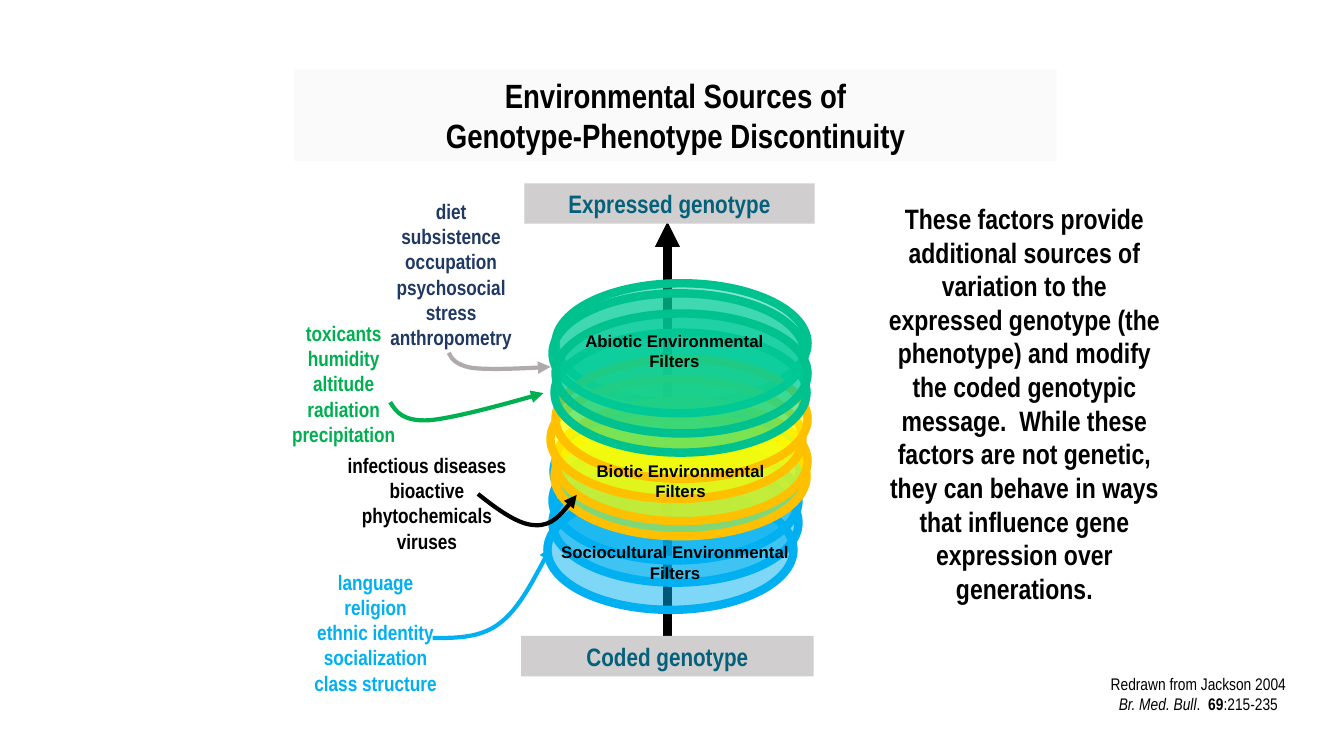
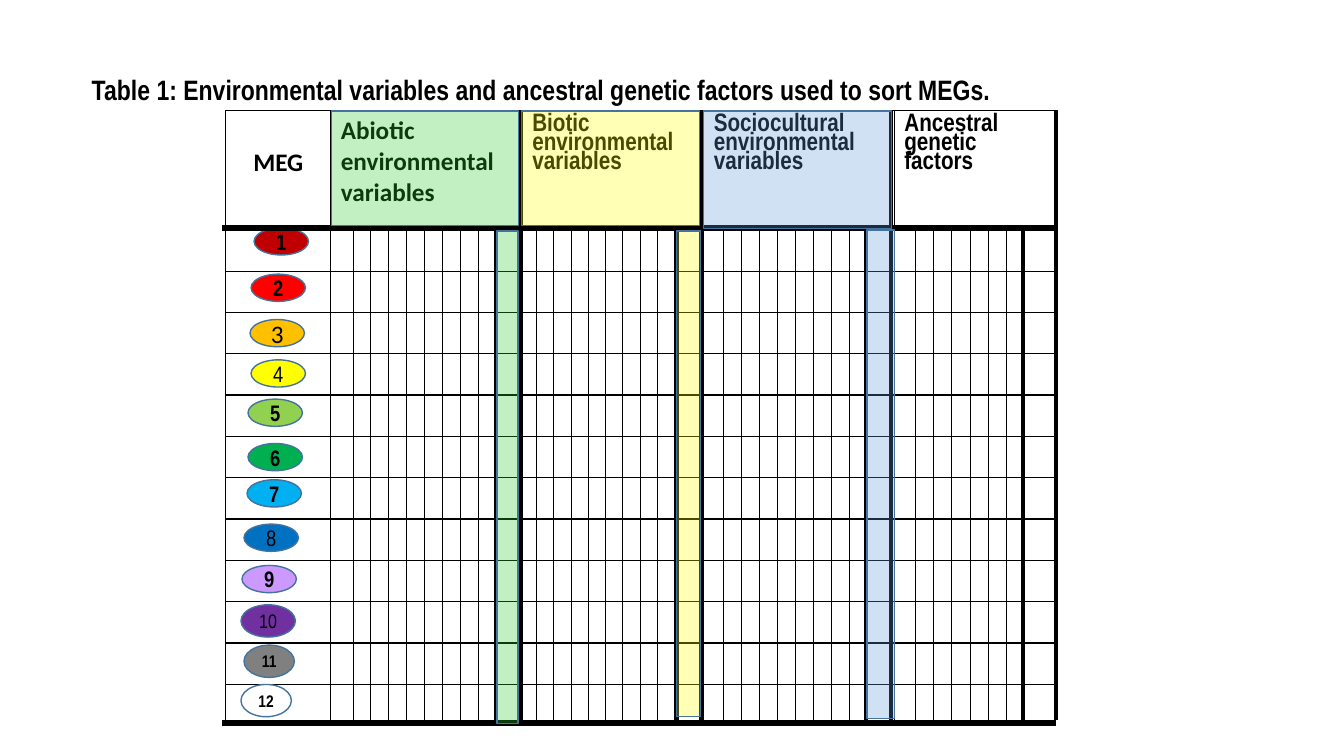
"""Build two slides on environmental filters and the variables that sort MEGs."""
from lxml.etree import SubElement
from pptx import Presentation
from pptx.dml.color import RGBColor
from pptx.enum.shapes import MSO_CONNECTOR, MSO_SHAPE
from pptx.enum.text import MSO_ANCHOR, MSO_AUTO_SIZE, PP_ALIGN
from pptx.oxml import parse_xml
from pptx.oxml.ns import nsdecls, qn
from pptx.util import Emu, Pt

EMU_PER_PX = 9144
NARROW, SANS, CALIBRI = "Arial Narrow", "Arial", "Calibri"
BLACK = RGBColor(0x00, 0x00, 0x00)
WHITE = RGBColor(0xFF, 0xFF, 0xFF)
TITLE_GRAY = RGBColor(0xFA, 0xFA, 0xFA)
LABEL_GRAY = RGBColor(0xD0, 0xCE, 0xCE)
ARROW_GRAY = RGBColor(0xAF, 0xAB, 0xAB)
DARK_GRAY = RGBColor(0x80, 0x80, 0x80)
TEAL = RGBColor(0x04, 0x61, 0x7B)
NAVY = RGBColor(0x20, 0x38, 0x64)
EDGE_BLUE = RGBColor(0x43, 0x73, 0x9E)
SKY = RGBColor(0x00, 0xB0, 0xF0)
BLUE = RGBColor(0x00, 0x70, 0xC0)
SOFT_BLUE = RGBColor(0x5B, 0x9B, 0xD5)
GREEN = RGBColor(0x00, 0xB0, 0x50)
LEAF = RGBColor(0x33, 0xCC, 0x33)
LIME = RGBColor(0x92, 0xD0, 0x50)
MINT = RGBColor(0x00, 0xCC, 0x99)
MINT_EDGE = RGBColor(0x00, 0xC2, 0x8F)
YELLOW = RGBColor(0xFF, 0xFF, 0x00)
AMBER = RGBColor(0xFF, 0xC0, 0x00)
RED = RGBColor(0xFF, 0x00, 0x00)
DARK_RED = RGBColor(0xC0, 0x00, 0x00)
LILAC = RGBColor(0xCC, 0x99, 0xFF)
PURPLE = RGBColor(0x70, 0x30, 0xA0)


def px(length):
    return Emu(round(length * EMU_PER_PX))


def write_text(frame, paragraphs, size=15, font=NARROW, color=BLACK, bold=True,
               align=PP_ALIGN.CENTER, anchor=MSO_ANCHOR.TOP, spacing=1.0, wrap=True):
    frame.word_wrap = wrap
    frame.auto_size = MSO_AUTO_SIZE.NONE
    frame.vertical_anchor = anchor
    for index, content in enumerate(paragraphs):
        paragraph = frame.add_paragraph() if index else frame.paragraphs[0]
        paragraph.alignment = align
        paragraph.line_spacing = spacing
        parts = [(content, {})] if isinstance(content, str) else content
        for words, changes in parts:
            run = paragraph.add_run()
            run.text = words
            run.font.name = font
            run.font.size = Pt(size)
            run.font.color.rgb = color
            run.font.bold = changes.get("bold", bold)
            run.font.italic = changes.get("italic", False)


class Deck:
    def __init__(self):
        self.presentation = Presentation()
        self.presentation.slide_width = px(1333)
        self.presentation.slide_height = px(750)
        self.slide = None

    def new_slide(self, title, box, fill=None, **text_format):
        layout = self.presentation.slide_layouts[5]
        self.slide = self.presentation.slides.add_slide(layout)
        heading = self.slide.shapes.title
        heading.left, heading.top, heading.width, heading.height = map(px, box)
        if fill is not None:
            heading.fill.solid()
            heading.fill.fore_color.rgb = fill
        write_text(heading.text_frame, title, **text_format)

    def text(self, box, paragraphs, **text_format):
        label = self.slide.shapes.add_textbox(*map(px, box))
        write_text(label.text_frame, paragraphs, **text_format)

    def shape(self, kind, box, fill, edge=None, edge_width=1, opacity=100,
              paragraphs=(), **text_format):
        figure = self.slide.shapes.add_shape(kind, *map(px, box))
        figure.shadow.inherit = False
        figure.fill.solid()
        figure.fill.fore_color.rgb = fill
        if opacity < 100:
            tint = figure.element.xpath("./p:spPr/a:solidFill/a:srgbClr")[0]
            SubElement(tint, qn("a:alpha"), val=str(opacity * 1000))
        if edge is None:
            figure.line.fill.background()
        else:
            self.stroke(figure, edge, edge_width)
        write_text(figure.text_frame, paragraphs, **text_format)

    def stroke(self, figure, color, width, arrow=False):
        figure.line.width = Pt(width)
        figure.line.color.rgb = color
        if arrow:
            outline = figure.element.xpath("./p:spPr/a:ln")[0]
            SubElement(outline, qn("a:tailEnd"), type="triangle")

    def line(self, start, end, width, arrow=False):
        rule = self.slide.shapes.add_connector(
            MSO_CONNECTOR.STRAIGHT, *map(px, (*start, *end)))
        self.stroke(rule, BLACK, width, arrow)
        SubElement(rule.element.spPr, qn("a:effectLst"))

    def curved_arrow(self, points, color):
        builder = self.slide.shapes.build_freeform(*points[0], scale=EMU_PER_PX)
        builder.add_line_segments(points[1:], close=False)
        curve = builder.convert_to_shape()
        curve.shadow.inherit = False
        curve.fill.background()
        self.stroke(curve, color, 3, arrow=True)
        segments = curve.element.xpath(".//a:lnTo")
        for index in range(0, len(segments), 3):
            bezier = SubElement(segments[index].getparent(), qn("a:cubicBezTo"))
            for segment in segments[index:index + 3]:
                bezier.append(segment[0])
                segment.getparent().remove(segment)

    def table(self, box, widths, heights, headings):
        grid = self.slide.shapes.add_table(len(heights), len(widths), *map(px, box)).table
        grid.first_row = grid.horz_banding = False
        for column, width in zip(grid.columns, widths):
            column.width = px(width)
        for row, height in zip(grid.rows, heights):
            row.height = px(height)
        for cell in grid.iter_cells():
            cell.fill.background()
            properties = cell._tc.get_or_add_tcPr()
            for index, side in enumerate("LRTB"):
                properties.insert(index, parse_xml(
                    f'<a:ln{side} {nsdecls("a")} w="12700"><a:solidFill>'
                    f'<a:srgbClr val="{BLACK}"/></a:solidFill></a:ln{side}>'))
        for index, (heading, text_format) in enumerate(headings):
            write_text(grid.cell(0, index).text_frame, [heading], size=18, **text_format)
        return grid


def build_filters(deck):
    deck.new_slide(["Environmental Sources of", "Genotype-Phenotype Discontinuity"],
                   (292, 69, 756, 91), TITLE_GRAY, size=24)
    deck.line((662, 632), (662, 220), 6, arrow=True)
    for label, box in (("Expressed genotype", (520, 182, 288, 40)),
                       ("Coded genotype", (517, 631, 290, 40))):
        deck.shape(MSO_SHAPE.RECTANGLE, box, LABEL_GRAY, paragraphs=[label],
                   size=18, color=TEAL)

    factors = (
        ((257, 560, 231, 136), SKY,
         ["language", "religion", "ethnic identity", "socialization", "class structure"]),
        ((241, 313, 200, 136), GREEN,
         ["toxicants", "humidity", "altitude", "radiation", "precipitation"]),
        ((372, 192, 151, 162), NAVY,
         ["diet", "subsistence", "occupation", "psychosocial stress", "anthropometry"]),
        ((311, 444, 225, 111), BLACK,
         ["infectious diseases", "bioactive phytochemicals", "viruses"]),
    )
    for box, color, names in factors:
        deck.text(box, names, color=color)

    deck.text((1084, 663, 209, 50), [[
        ("Redrawn from Jackson 2004 ", {}), ("Br. Med. Bull", {"italic": True}),
        (".  ", {}), ("69", {"bold": True}), (":215-235", {})]], size=12, bold=False)
    deck.shape(MSO_SHAPE.RECTANGLE, (865, 195, 302, 414), WHITE, size=20, paragraphs=[
        "These factors provide additional sources of variation to the expressed genotype "
        "(the phenotype) and modify the coded genotypic message.  While these factors are "
        "not genetic, they can behave in ways that influence gene expression over "
        "generations."])

    filter_layers = (
        (MINT, MINT_EDGE, 250, ((551, 281),)),
        (SKY, SKY, 244, ((554, 406), (549, 408), (548, 459), (543, 486), (548, 437))),
        (YELLOW, AMBER, 250, ((550, 413), (551, 398), (546, 376), (551, 356))),
        (MINT, MINT_EDGE, 250, ((548, 291), (550, 330), (551, 311))),
    )
    for fill, edge, width, corners in filter_layers:
        for left, top in corners:
            deck.shape(MSO_SHAPE.OVAL, (left, top, width, 119), fill, edge, 6, opacity=50)

    for box, label in (
            ((566, 323, 206, 50), ["Abiotic Environmental Filters"]),
            ((510, 533, 319, 50), ["Sociocultural Environmental", "Filters"]),
            ((572, 452, 206, 50), ["Biotic Environmental Filters"])):
        deck.text(box, label, size=12, font=SANS)

    arrows = (
        (GREEN, ((387, 399), (393, 409), (400, 418), (425, 417),
                 (450, 415), (522, 395), (539, 390))),
        (SKY, ((429, 633), (453, 633), (477, 633), (496, 618),
               (516, 603), (538, 557), (547, 543))),
        (BLACK, ((474, 490), (494, 506), (515, 521), (531, 521),
                 (548, 522), (568, 497), (572, 491))),
        (ARROW_GRAY, ((445, 350), (448, 356), (452, 362), (468, 365),
                      (485, 367), (532, 365), (546, 364))),
    )
    for color, points in arrows:
        deck.curved_arrow(points, color)


def build_variables(deck):
    deck.new_slide(
        ["Table 1: Environmental variables and ancestral genetic factors used to sort MEGs."],
        (81, 67, 965, 44), size=20, align=PP_ALIGN.LEFT)
    left = {"align": PP_ALIGN.LEFT}
    tight = {**left, "spacing": 0.8}
    grid = deck.table(
        (224, 110, 823, 604), (104, 190, 180, 189, 160), (118, *[41] * 11, 35),
        (("MEG", {"font": CALIBRI}),
         ("Abiotic environmental variables", {**left, "font": CALIBRI}),
         ("Biotic environmental variables", tight),
         ("Sociocultural environmental variables", tight),
         ("Ancestral genetic factors", tight)))
    grid.cell(0, 0).margin_top = px(36)

    groups = (
        (252, 226, 54, 27, DARK_RED, 16, True), (249, 272, 54, 27, RED, 16, True),
        (248, 317, 54, 27, AMBER, 18, False), (249, 357, 54, 27, YELLOW, 16, False),
        (246, 396, 54, 27, LIME, 16, True), (246, 440, 54, 27, GREEN, 16, True),
        (245, 476, 54, 27, SKY, 16, True), (242, 520, 54, 27, BLUE, 16, False),
        (240, 561, 54, 27, LILAC, 16, True), (239, 600, 54, 32, PURPLE, 14, False),
        (242, 640, 50, 32, DARK_GRAY, 12, True), (239, 679, 50, 32, WHITE, 12, True),
    )
    for number, (*box, fill, size, bold) in enumerate(groups, 1):
        deck.shape(MSO_SHAPE.OVAL, box, fill, EDGE_BLUE, paragraphs=[str(number)],
                   size=size, bold=bold, font=CALIBRI if number == 3 else NARROW,
                   anchor=MSO_ANCHOR.MIDDLE, wrap=False)

    for y in (717, 226):
        deck.line((220, y), (1046, y), 4.5)

    sections = (
        (350, 474, 8, 492, 517, LEAF, ((329, 110, 185, 114), (493, 229, 21, 489))),
        (532, 669, 9, 671, 695, YELLOW, ((517, 110, 177, 114), (671, 229, 24, 482))),
        (717, 842, 8, 859, 884, SOFT_BLUE, ((698, 110, 186, 117), (860, 228, 27, 485))),
        (908, 998, 6, 1015, 1047, None, ()),
    )
    for first, last, count, total, divider, tint, bands in sections:
        for index in range(count):
            x = first + (last - first) * index / (count - 1)
            deck.line((x, 228), (x, 716), 0.5)
        deck.line((total, 226), (total, 715), 3)
        deck.line((divider, 109), (divider, 714), 3)
        for band in bands:
            deck.shape(MSO_SHAPE.RECTANGLE, band, tint, EDGE_BLUE, opacity=29)


def main():
    deck = Deck()
    build_filters(deck)
    build_variables(deck)
    deck.presentation.save("out.pptx")


if __name__ == "__main__":
    main()
